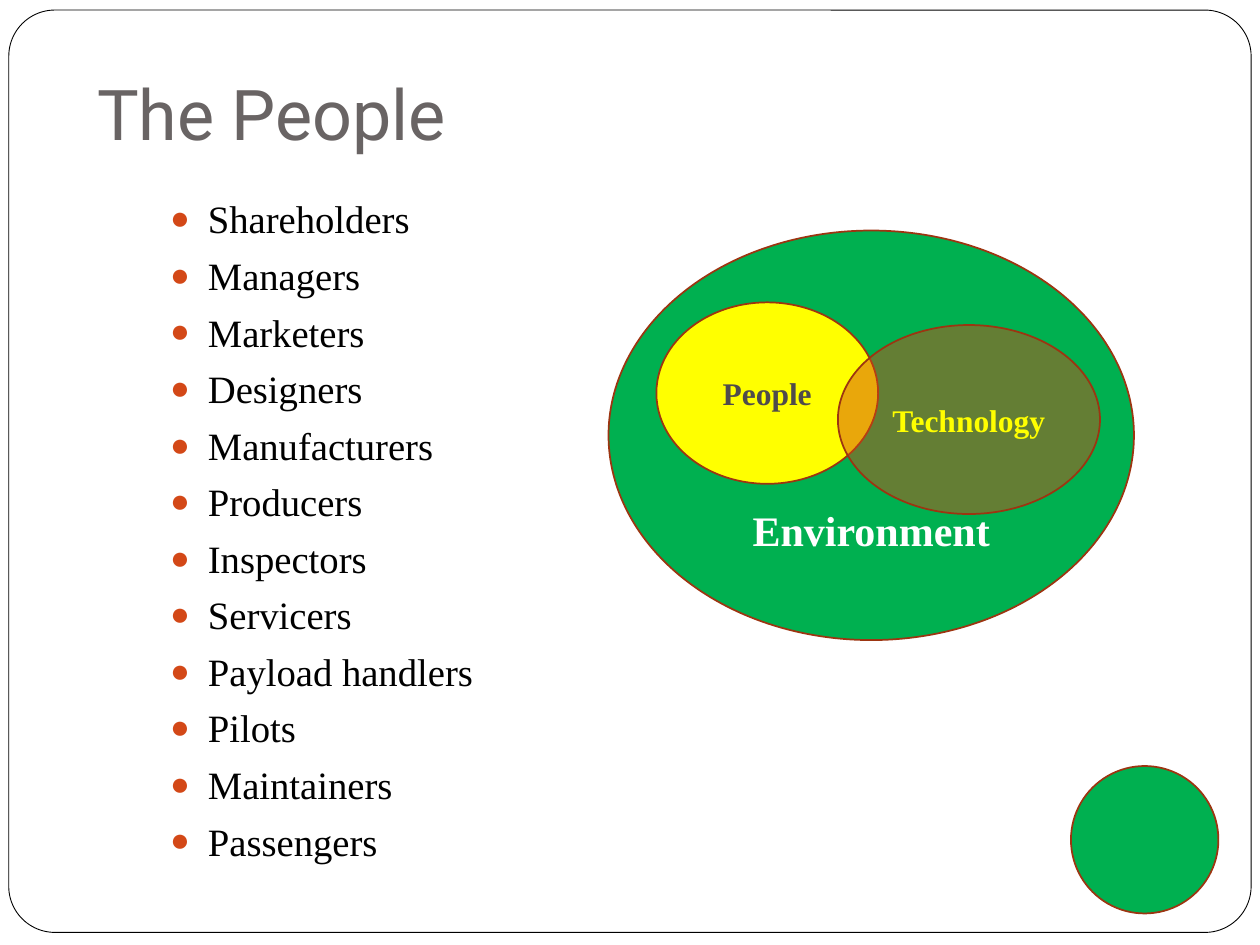
from dataclasses import dataclass
from lxml.etree import SubElement
from pptx import Presentation
from pptx.dml.color import RGBColor
from pptx.enum.shapes import MSO_SHAPE as Shape
from pptx.enum.text import MSO_ANCHOR as Anchor, MSO_AUTO_SIZE as Fit, PP_ALIGN as Align
from pptx.oxml.ns import qn
from pptx.util import Inches, Pt

SERIF = "Times New Roman"
GREEN, YELLOW, RUST, BROWN = "00B050", "FFFF00", "D34817", "9C3511"
ROLES = ["Shareholders", "Managers", "Marketers", "Designers",
         "Manufacturers", "Producers", "Inspectors", "Servicers",
         "Payload handlers", "Pilots", "Maintainers", "Passengers"]


@dataclass
class Oval:
    text: str
    box: tuple[float, float, float, float]
    fill: str
    ink: str
    size: float
    alpha: int = 100
    drop: float = 0.05  # top inset, pushes the label down


VENN = [
    Oval("Environment", (4.83, 1.83, 4.17, 3.25), GREEN, "FFFFFF", 24, drop=1.55),
    Oval("People", (5.21, 2.4, 1.76, 1.44), YELLOW, "4F4B4B", 18),
    Oval("Technology", (6.65, 2.58, 2.08, 1.5), RUST, YELLOW, 18, alpha=48),
]


def paint(target, tint: str) -> None:
    """Give a fill a solid colour."""
    target.solid()
    target.fore_color.rgb = RGBColor.from_string(tint)


def write(para, text: str, size: float, tint: str, face: str = SERIF,
          bold: bool = False) -> None:
    run = para.add_run()
    run.text = text
    run.font.size, run.font.name, run.font.bold = Pt(size), face, bold
    paint(run.font.fill, tint)


def place(shape, box: tuple) -> None:
    shape.left, shape.top, shape.width, shape.height = map(Inches, box)


def bullet(para) -> None:
    props = para._p.get_or_add_pPr()
    props.set("marL", str(Inches(0.3)))
    props.set("indent", str(Inches(-0.3)))
    tint = SubElement(props, qn("a:buClr"))
    SubElement(tint, qn("a:srgbClr"), val=RUST)
    SubElement(props, qn("a:buSzPct"), val="85000")
    SubElement(props, qn("a:buChar"), char="●")


def add(shapes, kind, box: tuple, fill: str, line: str, width: float):
    """Add a flat shape with a fill and an outline."""
    shape = shapes.add_shape(kind, *map(Inches, box))
    shape.shadow.inherit = False
    paint(shape.fill, fill)
    paint(shape.line.fill, line)
    shape.line.width = Pt(width)
    return shape


def draw(group, oval: Oval) -> None:
    shape = add(group.shapes, Shape.OVAL, oval.box, oval.fill, BROWN, 1)
    if oval.alpha < 100:
        tint = shape.fill._xPr.find(qn("a:solidFill"))[0]
        SubElement(tint, qn("a:alpha"), val=str(oval.alpha * 1000))
    frame = shape.text_frame
    frame.word_wrap = False
    frame.vertical_anchor = Anchor.MIDDLE
    frame.margin_top = Inches(oval.drop)
    para = frame.paragraphs[0]
    para.alignment = Align.CENTER
    write(para, oval.text, oval.size, oval.ink, bold=True)


def main() -> None:
    deck = Presentation()
    deck.slide_width, deck.slide_height = Inches(10), Inches(7.5)
    slide = deck.slides.add_slide(deck.slide_layouts[1])
    shapes = slide.shapes
    paint(slide.background.fill, "FFFFFF")

    # Rounded border, behind everything
    border = add(shapes, Shape.ROUNDED_RECTANGLE, (0.07, 0.08, 9.86, 7.32),
                 "FFFFFF", "000000", 0.5)
    border.adjustments[0] = 0.05
    shapes._spTree.insert(2, border._element)

    # Title
    title = shapes.title
    place(title, (0.67, 0.08, 8.5, 1.25))
    frame = title.text_frame
    frame.auto_size = Fit.NONE
    frame.vertical_anchor = Anchor.BOTTOM
    frame.margin_bottom = Inches(0.1)
    frame.paragraphs[0].alignment = Align.LEFT
    write(frame.paragraphs[0], "The People", 40, "696464", "Roboto")

    # List of roles
    body = slide.placeholders[1]
    place(body, (1.25, 1.5, 3.25, 4.95))
    frame = body.text_frame
    frame.auto_size = Fit.NONE
    for i, role in enumerate(ROLES):
        para = frame.add_paragraph() if i else frame.paragraphs[0]
        para.space_before = Pt(5.8)
        para.line_spacing = Pt(26.5)
        bullet(para)
        write(para, role, 22.1, "000000")

    # Plain corner shape
    add(shapes, Shape.OVAL, (8.5, 6.08, 1.17, 1.17), GREEN, BROWN, 1)

    # Overlapping ovals
    group = shapes.add_group_shape()
    for oval in VENN:
        draw(group, oval)

    deck.save("out.pptx")


if __name__ == "__main__":
    main()
